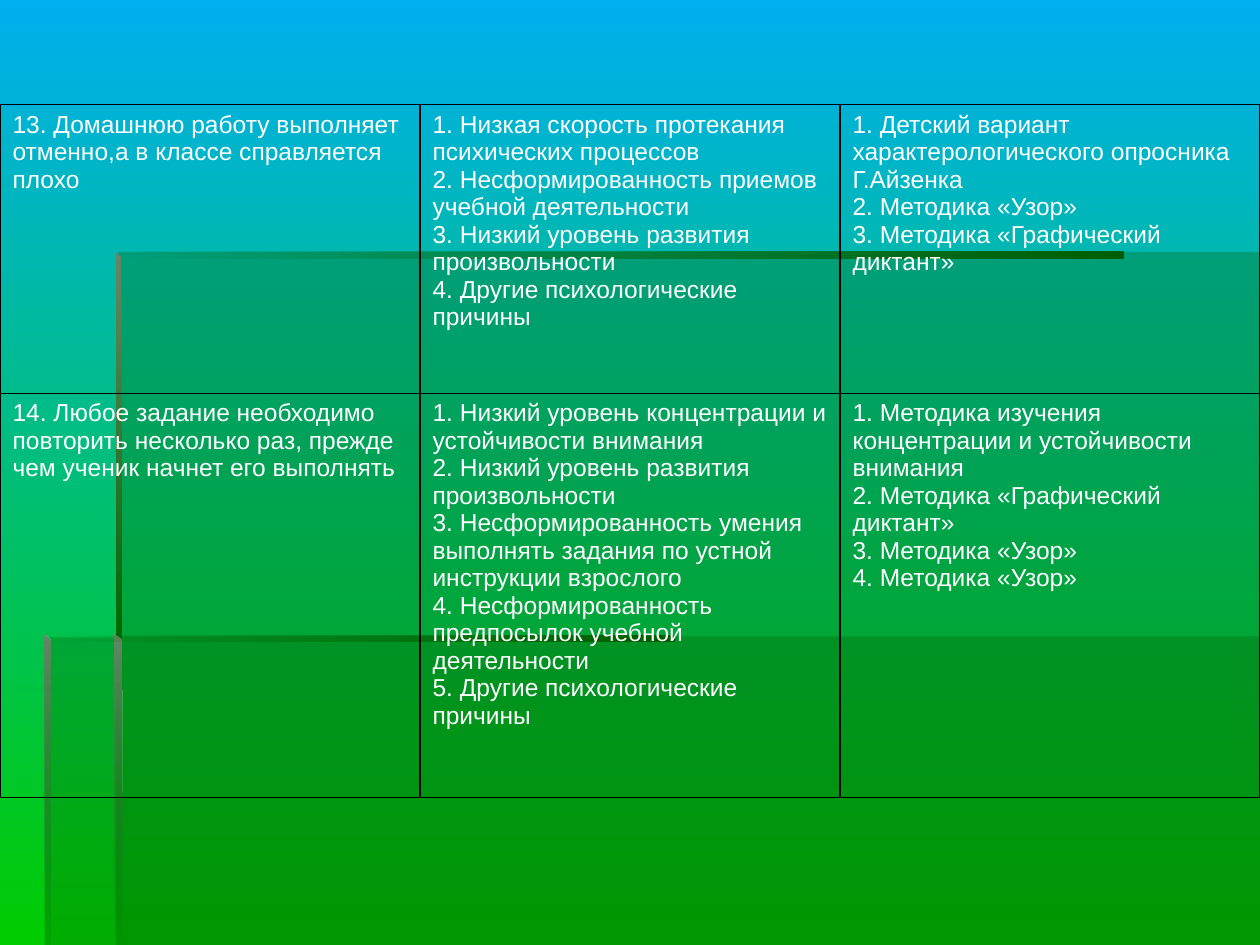
from pptx import Presentation
from pptx.dml.color import RGBColor
from pptx.oxml import ns
from pptx.util import Inches, Pt
from lxml import etree

HUES = {"sky": "00B0F0", "lime": "00CC00", "green": "006600", "deep": "005E00",
        "sage": "668666", "white": "FFFFFF", "black": "000000"}


def blend(fill, first, last, angle):
    """Two-stop gradient; the angle runs counter-clockwise."""
    fill.gradient()
    fill.gradient_angle = angle
    for stop, hue in zip(fill.gradient_stops, (first, last)):
        stop.color.rgb = RGBColor.from_string(HUES[hue])


deck = Presentation()
deck.slide_width, deck.slide_height = Inches(10), Inches(7.5)
slide = deck.slides.add_slide(deck.slide_layouts[6])
blend(slide.background.fill, "sky", "lime", 270)

# Backdrop: outline, hues, opacity in percent per hue, gradient angle
panels = [
    ([(0.92, 5.05), (0.92, 7.5), (10, 7.5), (10, 5.05)], ["green"], [30], 0),
    ([(0.94, 5.06), (0.36, 5.06), (0.36, 7.5), (10, 7.5), (10, 2), (0.94, 2)],
     ["green"], [30], 0),
    ([(0.92, 2), (0.92, 2.05), (8.92, 2.05), (8.92, 2)],
     ["green", "deep"], [0, 100], 0),
    ([(0.92, 2), (0.92, 5.1), (0.97, 5.1), (0.96, 2.04)],
     ["sage", "green"], [100, 100], 270),
    ([(0.91, 7.5), (0.97, 7.5), (0.96, 5.08), (0.91, 5.04)],
     ["sage", "green"], [100, 0], 270),
    ([(0.35, 5.04), (0.35, 5.09), (5.35, 5.09), (5.35, 5.04)],
     ["green", "deep"], [0, 100], 0),
    ([(0.35, 5.04), (0.35, 7.5), (0.4, 7.5), (0.4, 5.09)],
     ["sage", "green"], [100, 10], 270),
]
for points, hues, alphas, angle in panels:
    spots = [(Inches(x), Inches(y)) for x, y in points]
    pen = slide.shapes.build_freeform(*spots[0])
    pen.add_line_segments(spots[1:], close=True)
    panel = pen.convert_to_shape()
    panel.shadow.inherit = False
    panel.line.fill.background()
    if len(hues) == 1:
        panel.fill.solid()
        panel.fill.fore_color.rgb = RGBColor.from_string(HUES[hues[0]])
    else:
        blend(panel.fill, *hues, angle)
    colors = panel._element.spPr.iter(ns.qn("a:srgbClr"))
    for color, alpha in zip(list(colors), alphas):
        if alpha < 100:
            etree.SubElement(color, ns.qn("a:alpha"), val=str(alpha * 1000))

# Table: complaint, likely causes, methods
rows = [
    [["13. Домашнюю работу выполняет отменно,а в классе справляется плохо"],
     ["1. Низкая скорость протекания психических процессов",
      "2. Несформированность приемов учебной деятельности",
      "3. Низкий уровень развития произвольности",
      "4. Другие психологические причины"],
     ["1. Детский вариант характерологического опросника Г.Айзенка",
      "2. Методика «Узор»",
      "3. Методика «Графический диктант»"]],
    [["14. Любое задание необходимо повторить несколько раз, прежде чем ученик "
      "начнет его выполнять"],
     ["1. Низкий уровень концентрации и устойчивости внимания",
      "2. Низкий уровень развития произвольности",
      "3. Несформированность умения выполнять задания по устной инструкции взрослого",
      "4. Несформированность предпосылок учебной деятельности",
      "5. Другие психологические причины"],
     ["1. Методика изучения концентрации и устойчивости внимания",
      "2. Методика «Графический диктант»",
      "3. Методика «Узор»",
      "4. Методика «Узор»"]],
]
table = slide.shapes.add_table(2, 3, 0, Inches(0.83), Inches(10), Inches(5.5)).table
table.first_row = table.horz_banding = False
for row, height in zip(table.rows, (2.29, 3.21)):
    row.height = Inches(height)

for row, texts in zip(table.rows, rows):
    for cell, lines in zip(row.cells, texts):
        cell.text = "\n".join(lines)
        for para in cell.text_frame.paragraphs:
            para.font.name = "Arial"
            para.font.size = Pt(14)
            para.font.color.rgb = RGBColor.from_string(HUES["white"])
        props = cell._tc.get_or_add_tcPr()
        for side in ("lnL", "lnR", "lnT", "lnB"):
            edge = etree.SubElement(props, ns.qn("a:" + side), w=str(Pt(0.75)))
            ink = etree.SubElement(edge, ns.qn("a:solidFill"))
            etree.SubElement(ink, ns.qn("a:srgbClr"), val=HUES["black"])
        cell.fill.background()

deck.save("out.pptx")
